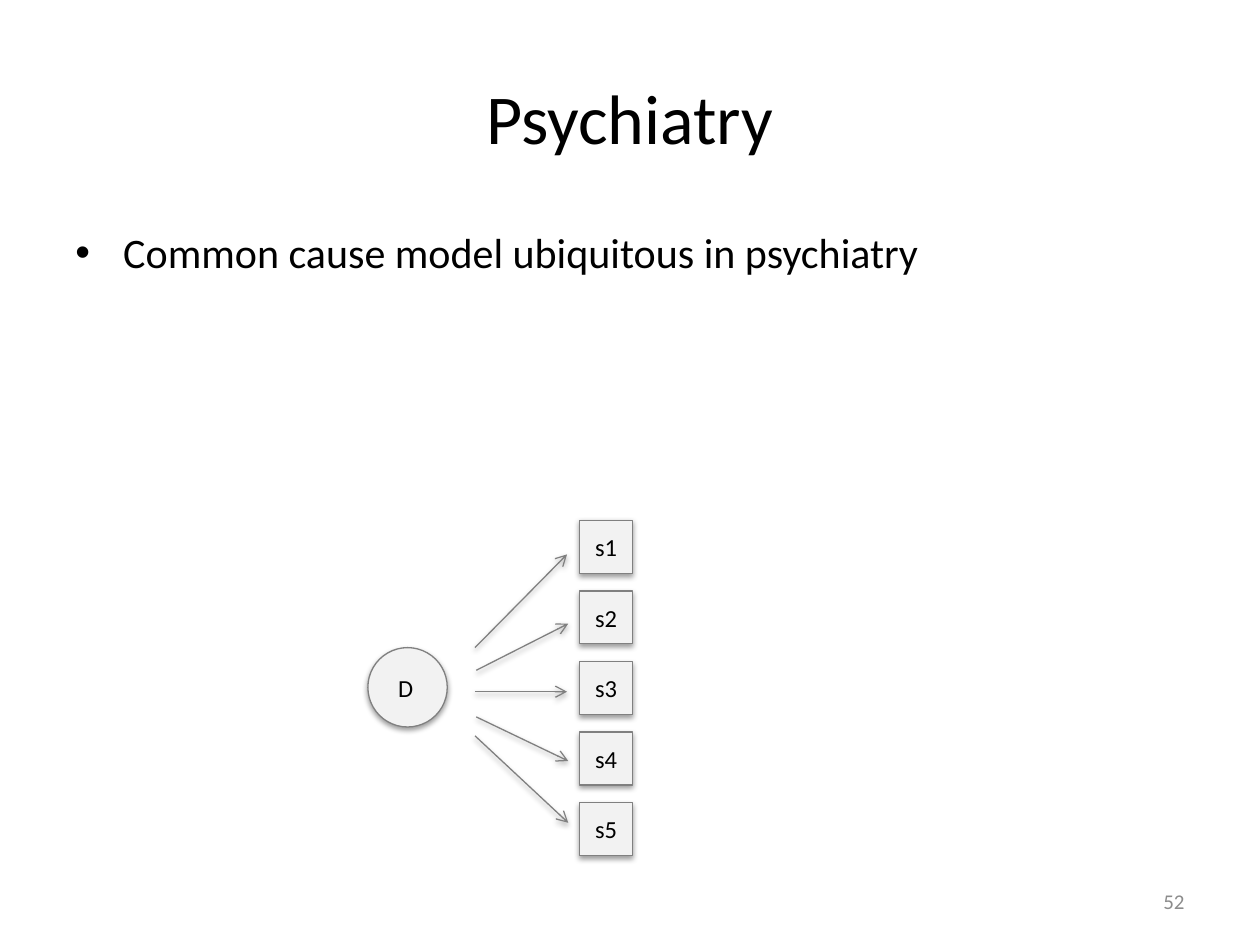
from lxml.etree import SubElement
from pptx import Presentation
from pptx.dml.color import RGBColor
from pptx.enum.shapes import MSO_CONNECTOR, MSO_SHAPE
from pptx.enum.text import MSO_ANCHOR, PP_ALIGN
from pptx.oxml.ns import qn
from pptx.util import Inches, Pt

INK = "000000"
GREY = "808080"
PALE = "F2F2F2"
NUMBER_GREY = "8C8C8C"
SQUARE_LEFT, SQUARE_TOP, SQUARE_SIZE, SQUARE_STEP = 4.6, 4.13, 0.42, 0.56
SYMPTOMS = ["s1", "s2", "s3", "s4", "s5"]
ARROWS = [
    (3.77, 5.14, 4.5, 4.4),
    (3.78, 5.32, 4.51, 4.95),
    (3.77, 5.49, 4.5, 5.49),
    (3.78, 5.69, 4.51, 6.04),
    (3.77, 5.84, 4.51, 6.53),
]


def color(hex_value):
    return RGBColor.from_string(hex_value)


def add_child(parent, tag, **attributes):
    return SubElement(parent, qn(tag), attributes)


def add_shadow(shape):
    effects = add_child(shape._element.spPr, "a:effectLst")
    shadow = add_child(effects, "a:outerShdw", blurRad="40000", dist="20000",
                       dir="5400000", rotWithShape="0")
    black = add_child(shadow, "a:srgbClr", val=INK)
    add_child(black, "a:alpha", val="38000")


def set_line(line):
    line.color.rgb = color(GREY)
    line.width = Pt(0.75)


def write_text(shape, text, size, hex_value=INK, align=PP_ALIGN.CENTER,
               anchor=MSO_ANCHOR.MIDDLE, bullet=False):
    frame = shape.text_frame
    frame.word_wrap = True
    frame.vertical_anchor = anchor
    paragraph = frame.paragraphs[0]
    paragraph.text = text
    paragraph.alignment = align
    if bullet:
        properties = paragraph._p.get_or_add_pPr()
        properties.set("marL", str(Inches(0.38)))
        properties.set("indent", str(Inches(-0.38)))
        add_child(properties, "a:buFont", typeface="Arial")
        add_child(properties, "a:buChar", char="•")
    font = paragraph.runs[0].font
    for name, value in {"name": "Calibri", "size": Pt(size)}.items():
        setattr(font, name, value)
    font.color.rgb = color(hex_value)


def add_text(slide, box, text, size, **options):
    shape = slide.shapes.add_textbox(*map(Inches, box))
    write_text(shape, text, size, **options)


def add_node(slide, preset, box):
    shape = slide.shapes.add_shape(preset, *map(Inches, box))
    shape.fill.solid()
    shape.fill.fore_color.rgb = color(PALE)
    set_line(shape.line)
    add_shadow(shape)
    return shape


def add_symptom(slide, row, label):
    top = SQUARE_TOP + row * SQUARE_STEP
    square = add_node(slide, MSO_SHAPE.RECTANGLE,
                      (SQUARE_LEFT, top, SQUARE_SIZE, SQUARE_SIZE))
    margins = {"margin_left": 0, "margin_right": 0}
    for name, value in margins.items():
        setattr(square.text_frame, name, value)
    write_text(square, label, 14)


def add_arrow(slide, points):
    connector = slide.shapes.add_connector(MSO_CONNECTOR.STRAIGHT, *map(Inches, points))
    set_line(connector.line)
    add_child(connector.line._get_or_add_ln(), "a:tailEnd", type="arrow")
    add_shadow(connector)


def main():
    presentation = Presentation()
    presentation.slide_width = Inches(10)
    presentation.slide_height = Inches(7.5)
    slide = presentation.slides.add_slide(presentation.slide_layouts[6])

    add_text(slide, (0.5, 0.3, 9, 1.25), "Psychiatry", 40)
    add_text(slide, (0.5, 1.75, 9, 4.95), "Common cause model ubiquitous in psychiatry", 24,
             align=PP_ALIGN.LEFT, anchor=MSO_ANCHOR.TOP, bullet=True)
    for row, label in enumerate(SYMPTOMS):
        add_symptom(slide, row, label)
    for points in ARROWS:
        add_arrow(slide, points)
    add_node(slide, MSO_SHAPE.OVAL, (2.92, 5.14, 0.63, 0.63))
    add_text(slide, (2.54, 4.78, 1.36, 1.36), "D", 14)
    add_text(slide, (7.17, 6.95, 2.33, 0.4), "52", 12,
             hex_value=NUMBER_GREY, align=PP_ALIGN.RIGHT)

    presentation.save("out.pptx")


if __name__ == "__main__":
    main()
